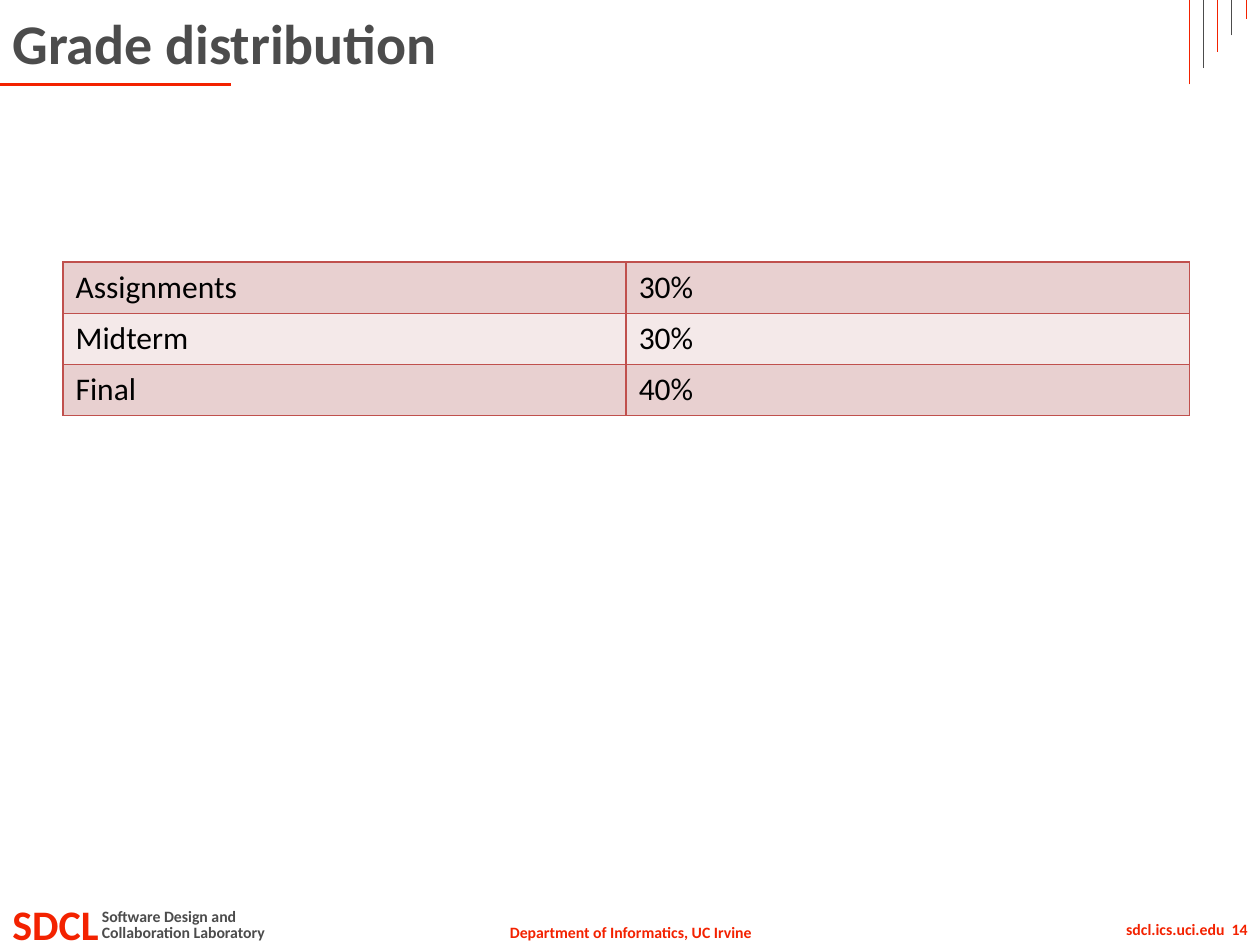
from lxml import etree
from pptx import Presentation
from pptx.dml.color import RGBColor
from pptx.enum.shapes import MSO_CONNECTOR
from pptx.enum.text import MSO_ANCHOR, MSO_AUTO_SIZE, PP_ALIGN
from pptx.oxml import parse_xml
from pptx.oxml.ns import nsdecls, qn
from pptx.util import Inches, Pt

RED = RGBColor(0xF3, 0x22, 0x00)
GREY = RGBColor(0x4C, 0x4C, 0x4C)
BLACK = RGBColor(0x00, 0x00, 0x00)
BAND_DARK = RGBColor(0xE8, 0xD0, 0xD0)
BAND_LIGHT = RGBColor(0xF4, 0xE9, 0xE9)
BORDER = RGBColor(0xC0, 0x50, 0x4D)


def add_text(paragraph, text, size, color, bold=True):
    run = paragraph.add_run()
    run.text = text
    run.font.name = "Calibri"
    run.font.size = Pt(size)
    run.font.bold = bold
    run.font.color.rgb = color


def add_line(x1, y1, x2, y2, color, width):
    line = slide.shapes.add_connector(
        MSO_CONNECTOR.STRAIGHT, Inches(x1), Inches(y1), Inches(x2), Inches(y2))
    line.line.color.rgb = color
    line.line.width = Pt(width)
    etree.SubElement(line._element.spPr, qn("a:effectLst"))


prs = Presentation()
prs.slide_width, prs.slide_height = Inches(10), Inches(7.5)
slide = prs.slides.add_slide(prs.slide_layouts[5])

footers = [
    ("Department of Informatics, UC Irvine", 3.93, 7.27, 2.15, 0.25, 9, RED, PP_ALIGN.CENTER, False),
    ("SDCL", 0, 7.08, 1, 0.5, 24, RED, PP_ALIGN.LEFT, True),
    ("Collaboration Laboratory", 0.71, 7.27, 1.53, 0.25, 9, GREY, PP_ALIGN.LEFT, False),
    ("Software Design and", 0.71, 7.15, 1.29, 0.25, 9, GREY, PP_ALIGN.LEFT, False),
    ("sdcl.ics.uci.edu  14", 7.84, 7.25, 2.16, 0.25, 9, RED, PP_ALIGN.RIGHT, True),
]
for text, left, top, width, height, size, color, align, wrap in footers:
    footer = slide.shapes.add_textbox(Inches(left), Inches(top), Inches(width), Inches(height))
    footer.text_frame.word_wrap = wrap
    paragraph = footer.text_frame.paragraphs[0]
    paragraph.alignment = align
    add_text(paragraph, text, size, color)

add_line(0, 0.67, 1.83, 0.67, RED, 1.5)
for i in range(5):
    x = 9.44 + 0.1125 * i
    add_line(x, 0.67 - 0.13 * i, x, 0, GREY if i % 2 else RED, 0.5)

title = slide.shapes.title
title.left, title.top, title.width, title.height = Inches(0), Inches(0), Inches(9), Inches(0.67)
title.text_frame.auto_size = MSO_AUTO_SIZE.NONE
title.text_frame.vertical_anchor = MSO_ANCHOR.MIDDLE
title.text_frame.paragraphs[0].alignment = PP_ALIGN.LEFT
add_text(title.text_frame.paragraphs[0], "Grade distribution", 32, GREY)

grades = [("Assignments", "30%"), ("Midterm", "30%"), ("Final", "40%")]
table = slide.shapes.add_table(
    len(grades), 2, Inches(0.5), Inches(2.08), Inches(8.94), Inches(1.22)).table
table.first_row = False
table.horz_banding = False
for r, grade in enumerate(grades):
    for c, text in enumerate(grade):
        cell = table.cell(r, c)
        add_text(cell.text_frame.paragraphs[0], text, 18, BLACK, bold=False)
        cell.fill.solid()
        cell.fill.fore_color.rgb = BAND_LIGHT if r % 2 else BAND_DARK
        for position, side in enumerate(("lnL", "lnR", "lnT", "lnB")):
            cell._tc.get_or_add_tcPr().insert(position, parse_xml(
                f'<a:{side} {nsdecls("a")} w="{Pt(1)}"><a:solidFill>'
                f'<a:srgbClr val="{BORDER}"/></a:solidFill></a:{side}>'))

prs.save("out.pptx")
